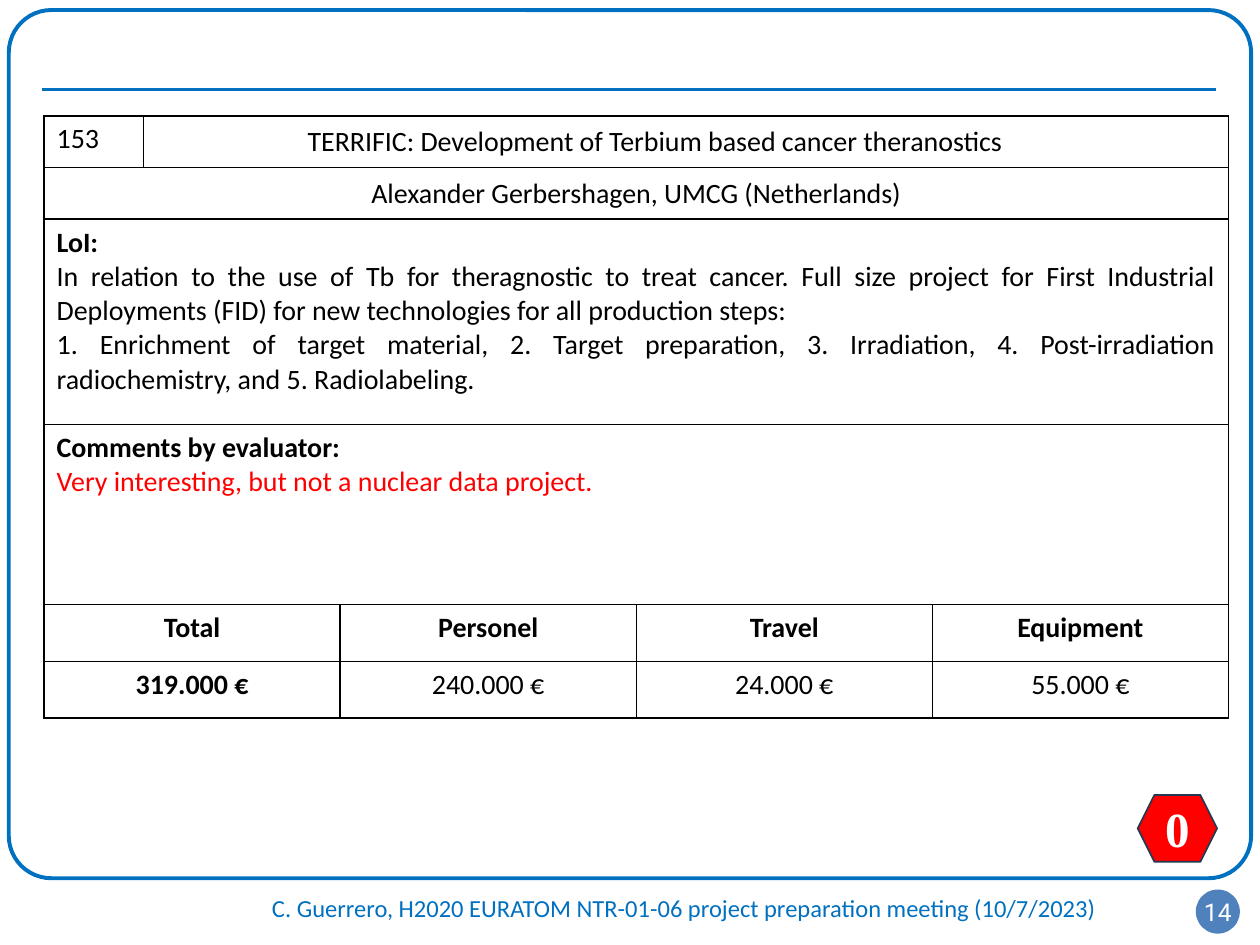
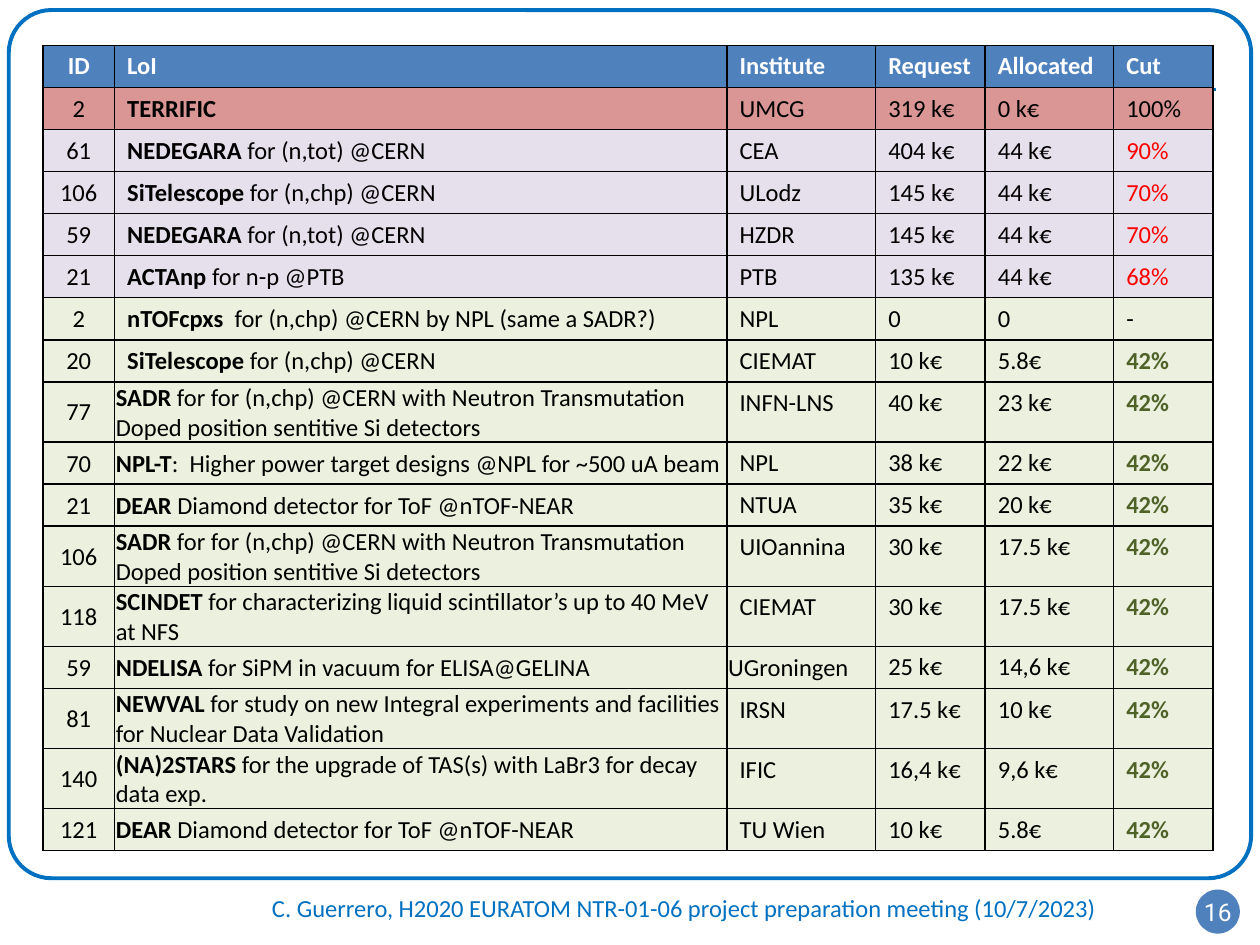
from lxml import etree
from pptx import Presentation
from pptx.dml.color import RGBColor
from pptx.enum.shapes import MSO_CONNECTOR, MSO_SHAPE
from pptx.enum.text import MSO_ANCHOR, PP_ALIGN
from pptx.oxml.ns import qn
from pptx.util import Inches, Pt

LEFT, CENTER, JUSTIFY = PP_ALIGN.LEFT, PP_ALIGN.CENTER, PP_ALIGN.JUSTIFY
TOP, MIDDLE = MSO_ANCHOR.TOP, MSO_ANCHOR.MIDDLE
STRAIGHT = MSO_CONNECTOR.STRAIGHT
ROUNDED, OVAL, HEXAGON = MSO_SHAPE.ROUNDED_RECTANGLE, MSO_SHAPE.OVAL, MSO_SHAPE.HEXAGON

COLORS = {
    "white": "FFFFFF", "black": "000000", "frame": "0070C0", "header": "4F81BD",
    "red": "FF0000", "navy": "233953", "green": "4F6228",
    "rejected": "D99694", "reduced": "E6E0EC", "funded": "EBF1DE",
}
FOOTER = "C. Guerrero, H2020 EURATOM NTR-01-06 project preparation meeting (10/7/2023)"
CELL_MARGINS = (0.1, 0.05, 0.1, 0.05)
TIGHT_MARGINS = (0.01, 0.01, 0.01, 0)

HEADINGS = ("ID", "LoI", "Institute", "Request", "Allocated", "Cut")
SADR_TEXT = " for for (n,chp) @CERN with Neutron Transmutation Doped position sentitive Si detectors"
DEAR_TEXT = " Diamond detector for ToF @nTOF-NEAR"
# Each row: ID, acronym, description, institute, request, allocated, cut
REJECTED = [("2", "TERRIFIC", "", "UMCG", "319 k€", "0 k€", "100%")]
REDUCED = [
    ("61", "NEDEGARA ", "for (n,tot) @CERN", "CEA", "404 k€", "44 k€", "90%"),
    ("106", "SiTelescope ", "for (n,chp) @CERN", "ULodz", "145 k€", "44 k€", "70%"),
    ("59", "NEDEGARA ", "for (n,tot) @CERN", "HZDR", "145 k€", "44 k€", "70%"),
    ("21", "ACTAnp ", "for n-p @PTB", "PTB", "135 k€", "44 k€", "68%"),
]
FUNDED = [
    ("2", "nTOFcpxs  ", "for (n,chp) @CERN by NPL (same a SADR?)", "NPL", "0", "0", "-"),
    ("20", "SiTelescope ", "for (n,chp) @CERN", "CIEMAT", "10 k€", "5.8€", "42%"),
    ("77", "SADR", SADR_TEXT, "INFN-LNS", "40 k€", "23 k€", "42%"),
    ("70", "NPL-T", ":  Higher power target designs @NPL for ~500 uA beam",
     "NPL", "38 k€", "22 k€", "42%"),
    ("21", "DEAR", DEAR_TEXT, "NTUA", "35 k€", "20 k€", "42%"),
    ("106", "SADR", SADR_TEXT, "UIOannina", "30 k€", "17.5 k€", "42%"),
    ("118", "SCINDET", " for characterizing liquid scintillator’s up to 40 MeV at NFS",
     "CIEMAT", "30 k€", "17.5 k€", "42%"),
    ("59", "NDELISA", " for SiPM in vacuum for ELISA@GELINA",
     "UGroningen", "25 k€", "14,6 k€", "42%"),
    ("81", "NEWVAL", " for study on new Integral experiments and facilities"
     " for Nuclear Data Validation", "IRSN", "17.5 k€", "10 k€", "42%"),
    ("140", "(NA)2STARS ", "for the upgrade of TAS(s) with LaBr3 for decay data exp.",
     "IFIC", "16,4 k€", "9,6 k€", "42%"),
    ("121", "DEAR", DEAR_TEXT, "TU Wien", "10 k€", "5.8€", "42%"),
]
GROUPS = [
    (REJECTED, "rejected", "black", False),
    (REDUCED, "reduced", "red", False),
    (FUNDED, "funded", "green", True),
]
FIRST_TIGHT_ROW = 8
TWO_LINE_LENGTH = 60


def rgb(name):
    return RGBColor.from_string(COLORS[name])


def inches(values):
    return [Inches(value) for value in values]


class Deck:
    def __init__(self):
        self.presentation = Presentation()
        self.presentation.slide_width = Inches(10)
        self.presentation.slide_height = Inches(7.5)
        self.slide = None

    def new_slide(self, number):
        """Start a slide with the shared frame, rule, footer and page number."""
        self.slide = self.presentation.slides.add_slide(self.presentation.slide_layouts[6])
        frame = self.shape(ROUNDED, (0.07, 0.08, 9.86, 6.89), "white", "frame", 2.25)
        frame.adjustments[0] = 0.049
        self.footer()
        self.rule((0.33, 0.71), (9.65, 0.71))
        badge = self.shape(OVAL, (9.49, 7.06, 0.35, 0.35), "header")
        self.label(badge, number, 14, "Roboto")
        frame = badge.text_frame
        frame.margin_left = frame.margin_top = frame.margin_right = frame.margin_bottom = 0
        frame.word_wrap = False

    def shape(self, kind, box, fill, line=None, width=1):
        shape = self.slide.shapes.add_shape(kind, *inches(box))
        shape.shadow.inherit = False
        shape.fill.solid()
        shape.fill.fore_color.rgb = rgb(fill)
        if line:
            shape.line.color.rgb = rgb(line)
            shape.line.width = Pt(width)
        else:
            shape.line.fill.background()
        return shape

    def label(self, shape, text, size, font, bold=False):
        shape.text_frame.text = text
        shape.text_frame.vertical_anchor = MIDDLE
        paragraph = shape.text_frame.paragraphs[0]
        paragraph.alignment = CENTER
        self.format_run(paragraph.runs[0], size, "white", bold, font)

    def format_run(self, run, size, color, bold=False, font="Calibri"):
        run.font.name = font
        run.font.size = Pt(size)
        run.font.bold = bold
        run.font.color.rgb = rgb(color)

    def footer(self):
        text_box = self.slide.shapes.add_textbox(*inches((1.69, 7.04, 7.48, 0.39)))
        text_frame = text_box.text_frame
        text_frame.word_wrap = True
        text_frame.margin_bottom = Inches(0.1)
        text_frame.text = FOOTER
        paragraph = text_frame.paragraphs[0]
        paragraph.alignment = CENTER
        self.format_run(paragraph.runs[0], 14, "frame")

    def rule(self, start, end):
        connector = self.slide.shapes.add_connector(STRAIGHT, *inches(start + end))
        connector.line.color.rgb = rgb("frame")
        connector.line.width = Pt(1.5)
        etree.SubElement(connector._element.spPr, qn("a:effectLst"))

    def table(self, left, top, widths, heights):
        """Add a plain table with thin black borders on every cell."""
        box = inches((left, top, sum(widths), sum(heights)))
        table = self.slide.shapes.add_table(len(heights), len(widths), *box).table
        table.first_row = table.horz_banding = False
        for column, width in zip(table.columns, widths):
            column.width = Inches(width)
        for row, height in zip(table.rows, heights):
            row.height = Inches(height)
        for cell in table.iter_cells():
            self.borders(cell)
            cell.fill.background()
        return table

    def borders(self, cell):
        properties = cell._tc.get_or_add_tcPr()
        for side in ("a:lnL", "a:lnR", "a:lnT", "a:lnB"):
            line = etree.SubElement(properties, qn(side), w=str(Pt(1)))
            fill = etree.SubElement(line, qn("a:solidFill"))
            etree.SubElement(fill, qn("a:srgbClr"), val=COLORS["black"])

    def cell(self, cell, paragraphs, size, align=LEFT, margins=CELL_MARGINS,
             anchor=TOP, fill=None):
        """Fill a cell; each paragraph is a list of (text, color, bold) runs."""
        (cell.margin_left, cell.margin_top,
         cell.margin_right, cell.margin_bottom) = inches(margins)
        cell.vertical_anchor = anchor
        if fill:
            cell.fill.solid()
            cell.fill.fore_color.rgb = rgb(fill)
        for index, runs in enumerate(paragraphs):
            text_frame = cell.text_frame
            paragraph = text_frame.add_paragraph() if index else text_frame.paragraphs[0]
            paragraph.alignment = align
            for text, color, bold in runs:
                run = paragraph.add_run()
                run.text = text
                self.format_run(run, size, color, bold)


def build_evaluation(deck):
    deck.new_slide("14")
    table = deck.table(0.35, 0.92, [0.79, 1.56, 2.35, 2.35, 2.35],
                       [0.41, 0.41, 1.63, 1.43, 0.45, 0.45])
    table.cell(0, 1).merge(table.cell(0, 4))
    for row in (1, 2, 3):
        table.cell(row, 0).merge(table.cell(row, 4))
    for row in (4, 5):
        table.cell(row, 0).merge(table.cell(row, 1))

    def write(row, column, *lines, **style):
        deck.cell(table.cell(row, column), [[line] for line in lines], 16, **style)

    write(0, 0, ("153", "black", False))
    write(0, 1, ("TERRIFIC: Development of Terbium based cancer theranostics", "black", False),
          align=CENTER, margins=(0.01, 0.01, 0.5, 0), anchor=MIDDLE)
    write(1, 0, ("Alexander Gerbershagen, UMCG (Netherlands)", "black", False),
          align=CENTER, margins=TIGHT_MARGINS, anchor=MIDDLE)
    write(2, 0, ("LoI:", "black", True),
          ("In relation to the use of Tb for theragnostic to treat cancer. Full size project "
           "for First Industrial Deployments (FID) for new technologies for all production "
           "steps:", "black", False),
          ("1. Enrichment of target material, 2. Target preparation, 3. Irradiation, "
           "4. Post-irradiation radiochemistry, and 5. Radiolabeling.", "black", False),
          align=JUSTIFY)
    write(3, 0, ("Comments by evaluator:", "black", True),
          ("Very interesting, but not a nuclear data project.", "red", False))
    budget = [("Total", "319.000 €"), ("Personel", "240.000 €"),
              ("Travel", "24.000 €"), ("Equipment", "55.000 €")]
    for column, (heading, amount) in zip((0, 2, 3, 4), budget):
        write(4, column, (heading, "black", True), align=CENTER)
        write(5, column, (amount, "black", heading == "Total"), align=CENTER)

    score = deck.shape(HEXAGON, (9.03, 6.31, 0.63, 0.53), "red", "navy")
    deck.label(score, "0", 28, "Times New Roman", bold=True)


def build_allocation(deck):
    deck.new_slide("16")
    letters = [letter for group in GROUPS for letter in group[0]]
    heights = [0.33] + [0.47 if len(letter[1] + letter[2]) > TWO_LINE_LENGTH else 0.33
                        for letter in letters]
    table = deck.table(0.34, 0.36, [0.57, 4.86, 1.18, 0.87, 1.02, 0.79], heights)

    def write(row, column, runs, fill, tight=False):
        deck.cell(table.cell(row, column), [runs], 14,
                  align=LEFT if column else CENTER,
                  margins=TIGHT_MARGINS if tight else CELL_MARGINS,
                  anchor=MIDDLE if tight else TOP, fill=fill)

    for column, heading in enumerate(HEADINGS):
        write(0, column, [(heading, "white", True)], "header")
    row = 0
    for group, fill, cut_color, cut_bold in GROUPS:
        for number, acronym, description, institute, request, allocated, cut in group:
            row += 1
            tight = row >= FIRST_TIGHT_ROW
            title = [(acronym, "black", True)]
            if description:
                title.append((description, "black", False))
            write(row, 0, [(number, "black", False)], fill, tight)
            write(row, 1, title, fill, tight)
            write(row, 2, [(institute, "black", False)], fill, institute == "UGroningen")
            write(row, 3, [(request, "black", False)], fill)
            write(row, 4, [(allocated, "black", False)], fill)
            has_cut = cut != "-"
            write(row, 5, [(cut, cut_color if has_cut else "black", cut_bold and has_cut)], fill)


def main():
    deck = Deck()
    build_evaluation(deck)
    build_allocation(deck)
    deck.presentation.save("out.pptx")


if __name__ == "__main__":
    main()
